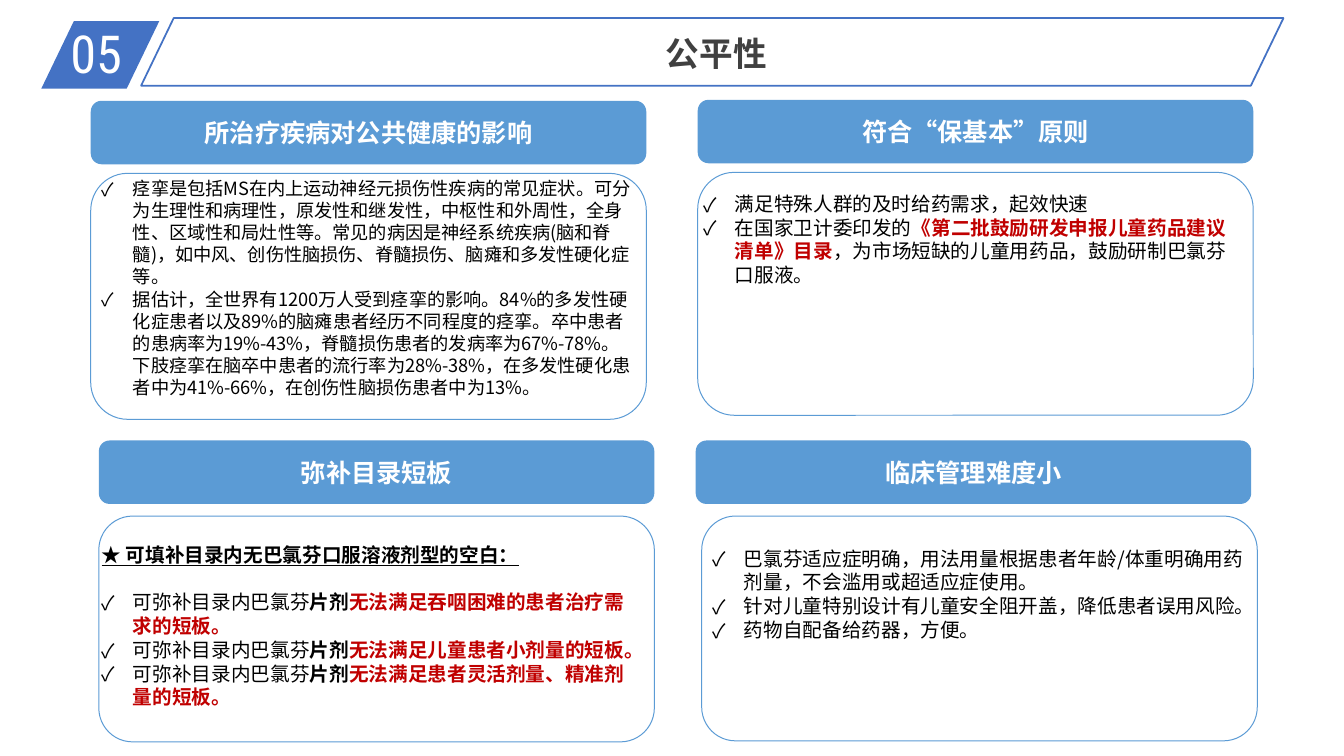
from lxml import etree
from pptx import Presentation, util as u
from pptx.dml.color import RGBColor
from pptx.enum import shapes, text
from pptx.oxml.ns import qn

CJK = "Noto Sans CJK SC"
BLUE, LIGHT_BLUE, RED = "4472C4", "5B9BD5", "C00000"
CARD_WIDTH, HEADER_HEIGHT = 5.51, 0.63
HANG = u.Inches(0.31)

presentation = Presentation()
presentation.slide_width, presentation.slide_height = u.Inches(13.33), u.Inches(7.5)
slide = presentation.slides.add_slide(presentation.slide_layouts[5])


def add_outline(preset, left, top, width, height, adjustment, fill=None, line=None, points=1.0):
    """Add a preset shape without shadow, filled or outlined with hex colours."""
    shape = slide.shapes.add_shape(preset, *map(u.Inches, (left, top, width, height)))
    shape.shadow.inherit = False
    shape.adjustments[0] = adjustment
    if fill:
        shape.fill.solid()
        shape.fill.fore_color.rgb = RGBColor.from_string(fill)
    else:
        shape.fill.background()
    if line:
        shape.line.color.rgb = RGBColor.from_string(line)
        shape.line.width = u.Pt(points)
    else:
        shape.line.fill.background()
    return shape


def add_run(paragraph, words, size, color="000000", bold=False, name=CJK):
    """Append a run whose Latin and East Asian fonts are the same."""
    run = paragraph.add_run()
    run.text = words
    run.font.size, run.font.bold, run.font.name = u.Pt(size), bold, name
    run.font.color.rgb = RGBColor.from_string(color)
    etree.SubElement(run._r.get_or_add_rPr(), qn("a:ea"), typeface=name)
    return run


# Title bar
slant = shapes.MSO_SHAPE.PARALLELOGRAM
add_outline(slant, 0.41, 0.21, 1.17, 0.67, 0.482, fill=BLUE)
add_outline(slant, 1.4, 0.18, 11.33, 0.67, 0.482, line=BLUE, points=1.25)

number = slide.shapes.add_textbox(*map(u.Inches, (0.6, 0.16, 1.12, 0.73)))
add_run(number.text_frame.paragraphs[0], "05", 37.4, "FFFFFF", name="Roboto Condensed")

title = slide.shapes.title
title.left, title.top, title.width, title.height = map(u.Inches, (2.95, 0.28, 8.31, 0.5))
title.text_frame.auto_size = text.MSO_AUTO_SIZE.NONE
title.text_frame.vertical_anchor = text.MSO_ANCHOR.MIDDLE
title.text_frame.paragraphs[0].alignment = text.PP_ALIGN.CENTER
add_run(title.text_frame.paragraphs[0], "公平性", 24, "404040", bold=True)

# Each card: heading, header (left, top), panel (left, top, height),
# body (left, top, height), size, line pitch, lead line, bullets.
# A bullet is a list of (words, style), with style "plain", "bold" or "red".
TABLET = [("可弥补目录内巴氯芬", "plain"), ("片剂", "bold")]
cards = [
    ("所治疗疾病对公共健康的影响", (0.9, 1), (0.9, 1.72, 2.44), (0.91, 1.71, 2.45), 13, 15.75, None, [
        [("痉挛是包括MS在内上运动神经元损伤性疾病的常见症状。可分为生理性和病理性，原发性和继发性，"
          "中枢性和外周性，全身性、区域性和局灶性等。常见的病因是神经系统疾病(脑和脊髓)，如中风、"
          "创伤性脑损伤、脊髓损伤、脑瘫和多发性硬化症等。", "plain")],
        [("据估计，全世界有1200万人受到痉挛的影响。84%的多发性硬化症患者以及89%的脑瘫患者经历"
          "不同程度的痉挛。卒中患者的患病率为19%-43%，脊髓损伤患者的发病率为67%-78%。"
          "下肢痉挛在脑卒中患者的流行率为28%-38%，在多发性硬化患者中为41%-66%，"
          "在创伤性脑损伤患者中为13%。", "plain")],
    ]),
    ("符合“保基本”原则", (6.92, 0.99), (6.92, 1.71, 2.41), (6.88, 1.85, 1.22), 14, 17, None, [
        [("满足特殊人群的及时给药需求，起效快速", "plain")],
        [("在国家卫计委印发的", "plain"),
         ("《第二批鼓励研发申报儿童药品建议清单》目录", "red"),
         ("，为市场短缺的儿童用药品，鼓励研制巴氯芬口服液。", "plain")],
    ]),
    ("弥补目录短板", (0.98, 4.37), (0.98, 5.12, 2.24), (0.91, 5.33, 1.75), 14, 17,
     "★ 可填补目录内无巴氯芬口服溶液剂型的空白：", [
        TABLET + [("无法满足吞咽困难的患者治疗需求的短板。", "red")],
        TABLET + [("无法满足儿童患者小剂量的短板。", "red")],
        TABLET + [("无法满足患者灵活剂量、精准剂量的短板。", "red")],
    ]),
    ("临床管理难度小", (6.9, 4.37), (6.96, 5.12, 2.23), (6.97, 5.37, 1.04), 14, 17, None, [
        [("巴氯芬适应症明确，用法用量根据患者年龄/体重明确用药剂量，不会滥用或超适应症使用。", "plain")],
        [("针对儿童特别设计有儿童安全阻开盖，降低患者误用风险。", "plain")],
        [("药物自配备给药器，方便。", "plain")],
    ]),
]

rounded = shapes.MSO_SHAPE.ROUNDED_RECTANGLE
for heading, header_at, panel_at, body_at, size, pitch, lead, bullets in cards:
    header = add_outline(rounded, *header_at, CARD_WIDTH, HEADER_HEIGHT, 0.17, fill=LIGHT_BLUE)
    header.text_frame.vertical_anchor = text.MSO_ANCHOR.MIDDLE
    header.text_frame.paragraphs[0].alignment = text.PP_ALIGN.CENTER
    add_run(header.text_frame.paragraphs[0], heading, 18, "FFFFFF", bold=True)

    left, top, height = panel_at
    add_outline(rounded, left, top, CARD_WIDTH, height, 0.15, line=LIGHT_BLUE, points=0.72)

    left, top, height = body_at
    body = slide.shapes.add_textbox(*map(u.Inches, (left, top, CARD_WIDTH, height)))
    frame = body.text_frame
    frame.word_wrap = True
    paragraph = frame.paragraphs[0]
    if lead:
        paragraph.line_spacing = u.Pt(pitch)
        paragraph.space_after = u.Pt(pitch)
        add_run(paragraph, lead, size, bold=True).font.underline = True
    for index, bullet in enumerate(bullets):
        if lead or index:
            paragraph = frame.add_paragraph()
        paragraph.line_spacing = u.Pt(pitch)
        properties = paragraph._p.get_or_add_pPr()
        properties.set("marL", str(HANG))
        properties.set("indent", str(-HANG))
        etree.SubElement(properties, qn("a:buFont"), typeface=CJK)
        etree.SubElement(properties, qn("a:buChar"), char="✓")
        for words, style in bullet:
            add_run(paragraph, words, size, RED if style == "red" else "000000", style != "plain")

presentation.save("out.pptx")
